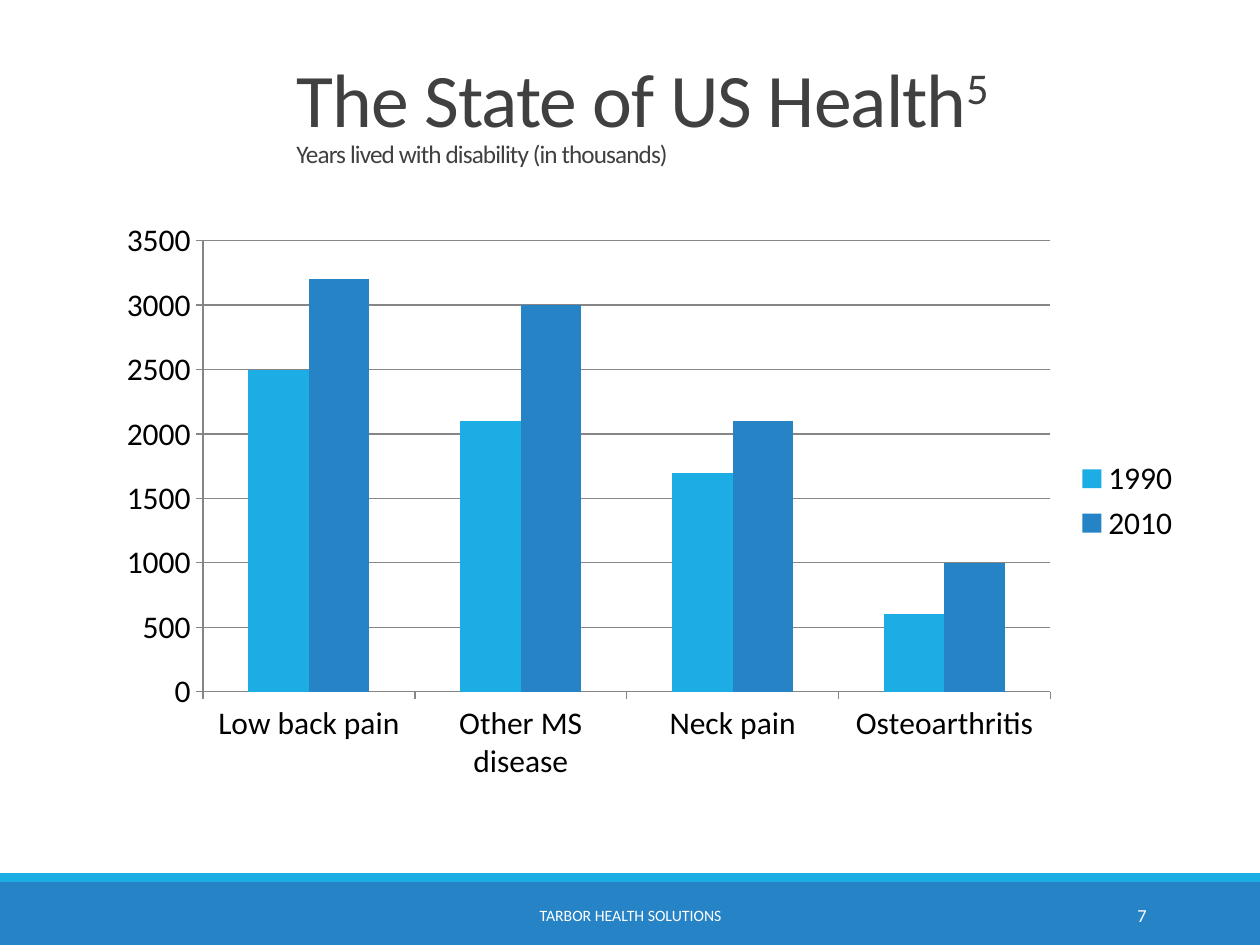
from dataclasses import dataclass

from pptx import Presentation
from pptx.chart.data import CategoryChartData
from pptx.dml.color import RGBColor
from pptx.enum.chart import XL_CHART_TYPE, XL_LEGEND_POSITION, XL_TICK_MARK
from pptx.enum.shapes import MSO_SHAPE
from pptx.enum.text import MSO_ANCHOR, PP_ALIGN
from pptx.util import Emu, Pt

CLUSTERED = XL_CHART_TYPE.COLUMN_CLUSTERED
LEGEND_RIGHT = XL_LEGEND_POSITION.RIGHT
TICK_OUT, TICK_NONE = XL_TICK_MARK.OUTSIDE, XL_TICK_MARK.NONE
RECTANGLE = MSO_SHAPE.RECTANGLE
MIDDLE, BOTTOM = MSO_ANCHOR.MIDDLE, MSO_ANCHOR.BOTTOM
CENTER, RIGHT = PP_ALIGN.CENTER, PP_ALIGN.RIGHT

EMU_PER_PX = 914400 / 126
FONT = "Calibri"
COLORS = {
    "sky": "1CADE4",
    "blue": "2683C6",
    "title": "404040",
    "grid": "868686",
    "black": "000000",
    "white": "FFFFFF",
}


@dataclass(frozen=True)
class Area:
    left: int
    top: int
    width: int
    height: int

    def emu(self) -> list[Emu]:
        sides = (self.left, self.top, self.width, self.height)
        return [px(side) for side in sides]


@dataclass(frozen=True)
class Band:
    area: Area
    color: str


@dataclass(frozen=True)
class FooterText:
    text: str
    area: Area
    size: float
    align: PP_ALIGN


@dataclass(frozen=True)
class TitleSpan:
    text: str
    size: float
    baseline: int


@dataclass(frozen=True)
class YearSeries:
    year: str
    values: tuple[int, ...]
    color: str


BANDS = [
    Band(Area(0, 882, 1260, 63), "blue"),
    Band(Area(0, 873, 1260, 9), "sky"),
]
FOOTERS = [
    FooterText("TARBOR HEALTH SOLUTIONS", Area(381, 890, 499, 50), 9, CENTER),
    FooterText("7", Area(1023, 890, 136, 50), 10.5, RIGHT),
]
TITLE_AREA = Area(284, 81, 976, 94)
TITLE_LINES = [
    [TitleSpan("The State of US Health", 43.2, 0), TitleSpan("5", 43.2, 30000)],
    [TitleSpan("Years lived with disability (in thousands)", 14.4, 0)],
]
CHART_AREA = Area(105, 210, 1088, 582)
CONDITIONS = ["Low back pain", "Other MS disease", "Neck pain", "Osteoarthritis"]
SERIES = [
    YearSeries("1990", (2500, 2100, 1700, 600), "sky"),
    YearSeries("2010", (3200, 3000, 2100, 1000), "blue"),
]


def px(length: int) -> Emu:
    return Emu(round(length * EMU_PER_PX))


def rgb(name: str) -> RGBColor:
    return RGBColor.from_string(COLORS[name])


def set_font(font, size: float, color: str) -> None:
    font.name = FONT
    font.size = Pt(size)
    font.color.rgb = rgb(color)


def add_band(page, band: Band) -> None:
    shape = page.shapes.add_shape(RECTANGLE, *band.area.emu())
    shape.shadow.inherit = False
    shape.fill.solid()
    shape.fill.fore_color.rgb = rgb(band.color)
    shape.line.fill.background()


def add_text_frame(page, area: Area, anchor: MSO_ANCHOR):
    frame = page.shapes.add_textbox(*area.emu()).text_frame
    frame.word_wrap = True
    frame.vertical_anchor = anchor
    return frame


def add_title(page) -> None:
    para = add_text_frame(page, TITLE_AREA, BOTTOM).paragraphs[0]
    para.line_spacing = 0.85
    for index, line in enumerate(TITLE_LINES):
        if index:
            para.add_line_break()
        for item in line:
            span = para.add_run()
            span.text = item.text
            set_font(span.font, item.size, "title")
            properties = span._r.get_or_add_rPr()
            properties.set("spc", "-50")
            properties.set("baseline", str(item.baseline))


def add_footer(page, footer: FooterText) -> None:
    para = add_text_frame(page, footer.area, MIDDLE).paragraphs[0]
    para.text = footer.text
    para.alignment = footer.align
    set_font(para.font, footer.size, "white")


def add_disability_chart(page) -> None:
    data = CategoryChartData()
    data.categories = CONDITIONS
    for item in SERIES:
        data.add_series(item.year, item.values)
    chart = page.shapes.add_chart(CLUSTERED, *CHART_AREA.emu(), data).chart
    set_font(chart.font, 18, "black")
    chart.has_title = False
    chart.has_legend = True
    chart.legend.position = LEGEND_RIGHT
    chart.legend.include_in_layout = False

    plot = chart.plots[0]
    plot.gap_width = 150
    plot.overlap = 0
    plot.vary_by_categories = False
    for series, item in zip(plot.series, SERIES):
        series.format.fill.solid()
        series.format.fill.fore_color.rgb = rgb(item.color)

    value_axis = chart.value_axis
    value_axis.minimum_scale = 0
    value_axis.maximum_scale = 3500
    value_axis.major_unit = 500
    value_axis.has_major_gridlines = True
    for axis in (chart.category_axis, value_axis):
        axis.major_tick_mark = TICK_OUT
        axis.minor_tick_mark = TICK_NONE
    for element in (chart.category_axis, value_axis, value_axis.major_gridlines):
        element.format.line.color.rgb = rgb("grid")
        element.format.line.width = Pt(0.75)


def main() -> None:
    deck = Presentation()
    deck.slide_width, deck.slide_height = px(1260), px(945)
    page = deck.slides.add_slide(deck.slide_layouts[6])
    for band in BANDS:
        add_band(page, band)
    add_title(page)
    add_disability_chart(page)
    for footer in FOOTERS:
        add_footer(page, footer)
    deck.save("out.pptx")


if __name__ == "__main__":
    main()
